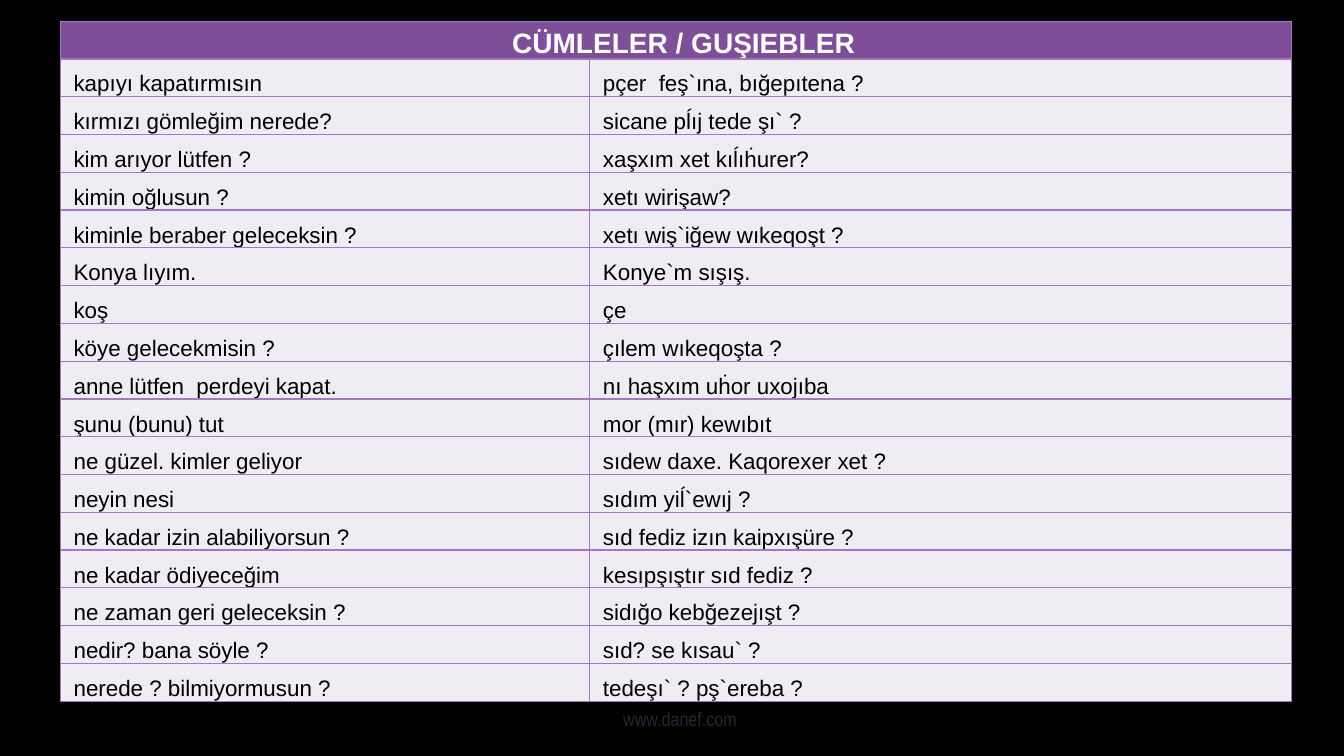
from pptx import Presentation
from pptx.dml.color import RGBColor as RGB
from pptx.enum.text import MSO_ANCHOR as ANCHOR, PP_ALIGN as ALIGN
from pptx.oxml.ns import qn
from pptx.util import Inches, Pt
from lxml.etree import SubElement as Sub

BLACK = RGB(0x00, 0x00, 0x00)
WHITE = RGB(0xFF, 0xFF, 0xFF)
PURPLE = RGB(0x7E, 0x4E, 0x99)
LILAC = RGB(0xF0, 0xEC, 0xF3)
RULE = RGB(0xA3, 0x79, 0xBB)
SLATE = RGB(0x22, 0x2A, 0x35)

WIDE, HIGH = 13.33, 7.5
SHARES = (0.43, 0.57)  # column widths as shares of the table
HEAD = "CÜMLELER / GUŞIEBLER"
SITE = "www.danef.com"
PHRASES = [
    ("kapıyı kapatırmısın", "pçer  feş`ına, bığepıtena ?"),
    ("kırmızı gömleğim nerede?", "sicane pĺıj tede şı` ?"),
    ("kim arıyor lütfen ?", "xaşxım xet kıĺıḣurer?"),
    ("kimin oğlusun ?", "xetı wirişaw?"),
    ("kiminle beraber geleceksin ?", "xetı wiş`iğew wıkeqoşt ?"),
    ("Konya lıyım.", "Konye`m sışış."),
    ("koş", "çe"),
    ("köye gelecekmisin ?", "çılem wıkeqoşta ?"),
    ("anne lütfen  perdeyi kapat.", "nı haşxım uḣor uxojıba"),
    ("şunu (bunu) tut", "mor (mır) kewıbıt"),
    ("ne güzel. kimler geliyor", "sıdew daxe. Kaqorexer xet ?"),
    ("neyin nesi", "sıdım yiĺ`ewıj ?"),
    ("ne kadar izin alabiliyorsun ?", "sıd fediz izın kaipxışüre ?"),
    ("ne kadar ödiyeceğim", "kesıpşıştır sıd fediz ?"),
    ("ne zaman geri geleceksin ?", "sidığo kebğezejışt ?"),
    ("nedir? bana söyle ?", "sıd? se kısau` ?"),
    ("nerede ? bilmiyormusun ?", "tedeşı` ? pş`ereba ?"),
]


def write(frame, text, size=16, color=BLACK, bold=False, font="Arial",
          align=ALIGN.LEFT, spacing=None):
    para = frame.paragraphs[0]
    para.alignment = align
    para.line_spacing = spacing
    run = para.add_run()
    run.text = text
    run.font.size = Pt(size)
    run.font.name = font
    run.font.bold = bold
    run.font.color.rgb = color


def style(cell, fill, indent):
    """Set the borders, fill and margins of one cell."""
    props = cell._tc.get_or_add_tcPr()
    for side in "LRTB":
        line = Sub(props, qn(f"a:ln{side}"), w=str(Pt(1)))
        Sub(Sub(line, qn("a:solidFill")), qn("a:srgbClr"), val=str(RULE))
    cell.fill.solid()
    cell.fill.fore_color.rgb = fill
    cell.vertical_anchor = ANCHOR.BOTTOM
    cell.margin_left = Inches(indent)
    cell.margin_right = cell.margin_top = Inches(0.01)
    cell.margin_bottom = 0


def phrase_table(slide, left, top, width, height):
    count = len(PHRASES) + 1
    table = slide.shapes.add_table(
        count, len(SHARES), Inches(left), Inches(top),
        Inches(width), Inches(height)).table
    for col, share in zip(table.columns, SHARES):
        col.width = Inches(width * share)
    for row in table.rows:
        row.height = Inches(height / count)

    # Heading across both columns
    for cell in table.rows[0].cells:
        style(cell, PURPLE, 0.16)
    head = table.cell(0, 0)
    head.merge(table.cell(0, 1))
    write(head.text_frame, HEAD, size=20, color=WHITE, bold=True,
          align=ALIGN.CENTER)

    # Phrase pairs
    for r, pair in enumerate(PHRASES, 1):
        for c, text in enumerate(pair):
            cell = table.cell(r, c)
            style(cell, LILAC, 0.13)
            write(cell.text_frame, text)


def footer(slide, left, top, width, height):
    box = slide.shapes.add_textbox(
        Inches(left), Inches(top), Inches(width), Inches(height))
    frame = box.text_frame
    frame.word_wrap = True
    frame.vertical_anchor = ANCHOR.MIDDLE
    write(frame, SITE, size=14, color=SLATE, font="Arial Narrow",
          align=ALIGN.CENTER, spacing=0.7)


def main():
    deck = Presentation()
    deck.slide_width, deck.slide_height = Inches(WIDE), Inches(HIGH)
    slide = deck.slides.add_slide(deck.slide_layouts[6])
    slide.background.fill.solid()
    slide.background.fill.fore_color.rgb = BLACK
    footer(slide, WIDE * 0.24, HIGH * 0.912, WIDE * 0.532, HIGH * 0.084)
    phrase_table(slide, WIDE * 0.045, HIGH * 0.028, WIDE * 0.916, HIGH * 0.9)
    deck.save("out.pptx")


if __name__ == "__main__":
    main()
